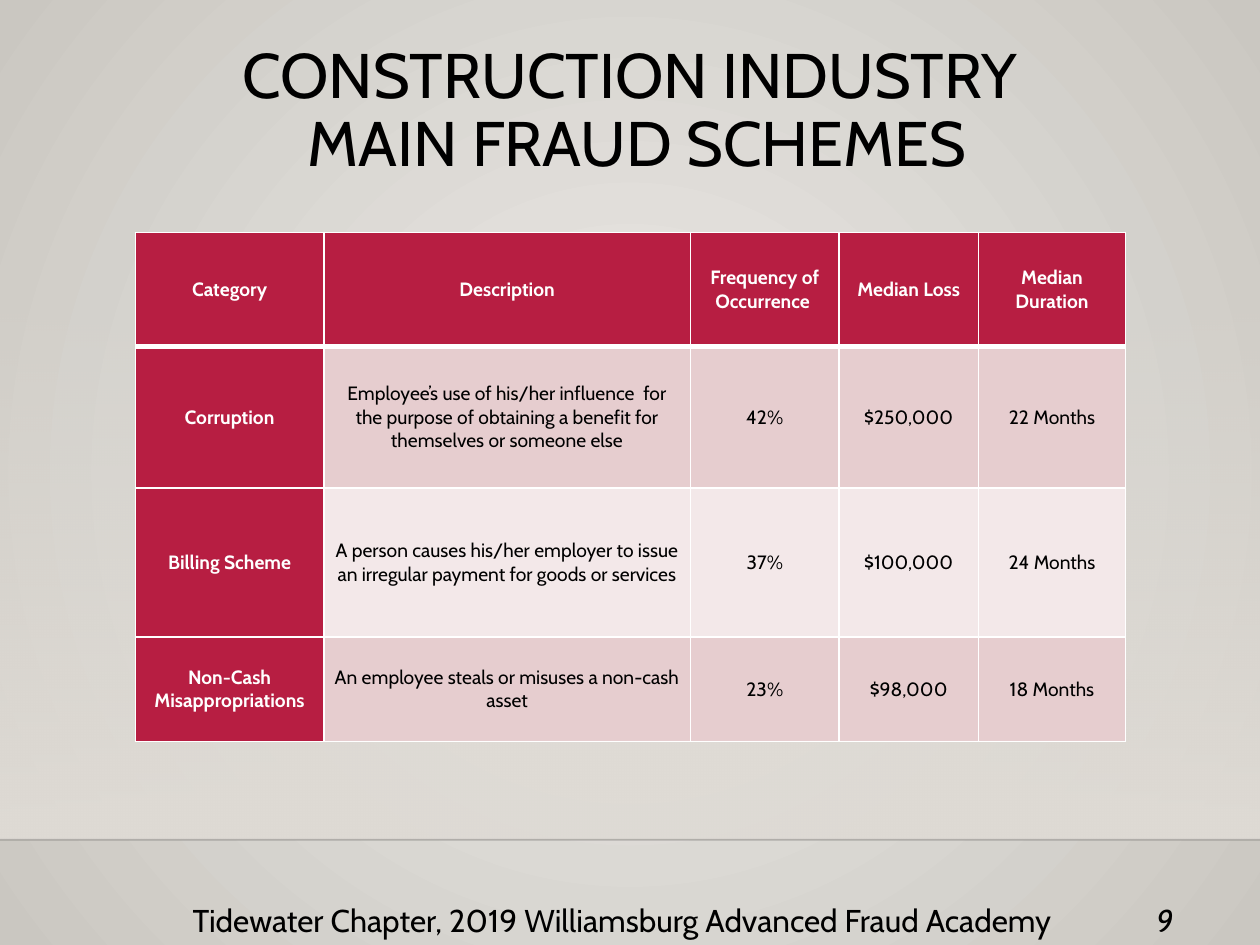
from lxml.etree import SubElement
from pptx import Presentation
from pptx.dml.color import RGBColor
from pptx.enum.shapes import MSO_CONNECTOR, MSO_SHAPE
from pptx.enum.text import MSO_ANCHOR, PP_ALIGN
from pptx.oxml.ns import qn
from pptx.util import Inches, Pt

THEME = {
    "font": "Cabin",
    "title": Pt(36), "footer": Pt(18), "table": Pt(11),
    "ink": RGBColor.from_string("000000"),
    "white": RGBColor.from_string("FFFFFF"),
    "accent": RGBColor.from_string("B71E42"),
    "bands": [RGBColor.from_string("E6CDCF"), RGBColor.from_string("F3E8E9")],
    "backdrop": [RGBColor.from_string("ECEAE7"), RGBColor.from_string("CAC7C1")],
    "haze": RGBColor.from_string("DFDBD5"),
    "rule": RGBColor.from_string("000001"),
}

deck = Presentation()
deck.slide_width, deck.slide_height = Inches(10), Inches(7.5)
slide = deck.slides.add_slide(deck.slide_layouts[6])

# The slide is a grid of 100 columns by 75 rows
COLUMN = deck.slide_width / 100
ROW = deck.slide_height / 75
HORIZON = 66.65


def place(left, top, width, height):
    return [round(n * unit) for n, unit in
            zip((left, top, width, height), (COLUMN, ROW, COLUMN, ROW))]


def write(frame, text, size, align=PP_ALIGN.CENTER, color=THEME["ink"], **style):
    frame.word_wrap = True
    line = frame.paragraphs[0]
    line.text = text
    line.alignment = align
    look = {"name": THEME["font"], "size": size, **style}
    for run in line.runs:
        for name, value in look.items():
            setattr(run.font, name, value)
        run.font.color.rgb = color
    return line


# Backdrop: a glow from the centre outwards
backdrop = slide.background.fill
backdrop.gradient()
for stop, color in zip(backdrop.gradient_stops, THEME["backdrop"]):
    stop.color.rgb = color
linear = next(slide.element.iter(qn("a:lin")))
gradient = linear.getparent()
gradient.remove(linear)
glow = SubElement(gradient, qn("a:path"), {"path": "circle"})
SubElement(glow, qn("a:fillToRect"), dict.fromkeys("ltrb", "50000"))

# Haze that thickens down to the horizon
haze = slide.shapes.add_shape(MSO_SHAPE.RECTANGLE, *place(0, 22, 100, HORIZON - 22))
haze.shadow.inherit = False
haze.line.fill.background()
haze.fill.gradient()
haze.fill.gradient_angle = 270
for stop in haze.fill.gradient_stops:
    stop.color.rgb = THEME["haze"]
clear = next(haze.element.iter(qn("a:srgbClr")))
SubElement(clear, qn("a:alpha"), val="0")

# Horizon line
left, level, right, _ = place(0, HORIZON, 100, 0)
horizon = slide.shapes.add_connector(MSO_CONNECTOR.STRAIGHT, left, level, right, level)
horizon.line.width = Pt(1)
horizon.line.color.rgb = THEME["rule"]
SubElement(next(horizon.element.iter(qn("a:srgbClr"))), qn("a:alpha"), val="20000")
SubElement(horizon.element.spPr, qn("a:effectLst"))

# Title, footer and page number
title = slide.shapes.add_textbox(*place(3.5, 3, 93, 12.5)).text_frame
write(title, "CONSTRUCTION INDUSTRY\v MAIN FRAUD SCHEMES", THEME["title"]).line_spacing = 0.9
footer = slide.shapes.add_textbox(*place(14.3, 71, 71.5, 4)).text_frame
write(footer, "Tidewater Chapter, 2019 Williamsburg Advanced Fraud Academy",
      THEME["footer"], PP_ALIGN.LEFT)
page = slide.shapes.add_textbox(*place(84.9, 71, 15.1, 5.5)).text_frame
write(page, "9", THEME["footer"], italic=True)

# Table of fraud schemes
schemes = [
    ["Category", "Description", "Frequency of Occurrence ", "Median Loss", "Median Duration"],
    ["Corruption", "Employee’s use of his/her influence  for the purpose of obtaining "
     "a benefit for themselves or someone else", "42%", "$250,000", "22 Months"],
    ["Billing Scheme", "A person causes his/her employer to issue an irregular payment "
     "for goods or services", "37%", "$100,000", "24 Months"],
    ["Non-Cash Misappropriations", "An employee steals or misuses a non-cash asset",
     "23%", "$98,000", "18 Months"],
]
widths = [14.95, 29.1, 11.8, 11.05, 11.7]
heights = [9.05, 11.25, 11.8, 8.3]
table = slide.shapes.add_table(len(heights), len(widths),
                               *place(10.75, 18.45, sum(widths), sum(heights))).table
for column, width in zip(table.columns, widths):
    column.width = round(width * COLUMN)
for row, height in zip(table.rows, heights):
    row.height = round(height * ROW)

cell_format = {
    "margin_left": Inches(0.07), "margin_right": Inches(0.07),
    "margin_top": 0, "margin_bottom": 0,
    "vertical_anchor": MSO_ANCHOR.MIDDLE,
}
for r, scheme in enumerate(schemes):
    for c, text in enumerate(scheme):
        cell = table.cell(r, c)
        for name, value in cell_format.items():
            setattr(cell, name, value)
        heading = r == 0 or c == 0
        write(cell.text_frame, text, THEME["table"], bold=heading,
              color=THEME["white"] if heading else THEME["ink"])
        # White borders, thick under the header
        for side in ("L", "R", "T", "B"):
            thick = (r, side) in ((0, "B"), (1, "T"))
            border = SubElement(cell._tc.get_or_add_tcPr(), qn(f"a:ln{side}"),
                                w=str(Pt(3 if thick else 1)))
            paint = SubElement(border, qn("a:solidFill"))
            SubElement(paint, qn("a:srgbClr"), val=str(THEME["white"]))
        cell.fill.solid()
        cell.fill.fore_color.rgb = THEME["accent"] if heading else THEME["bands"][(r - 1) % 2]

deck.save("out.pptx")
